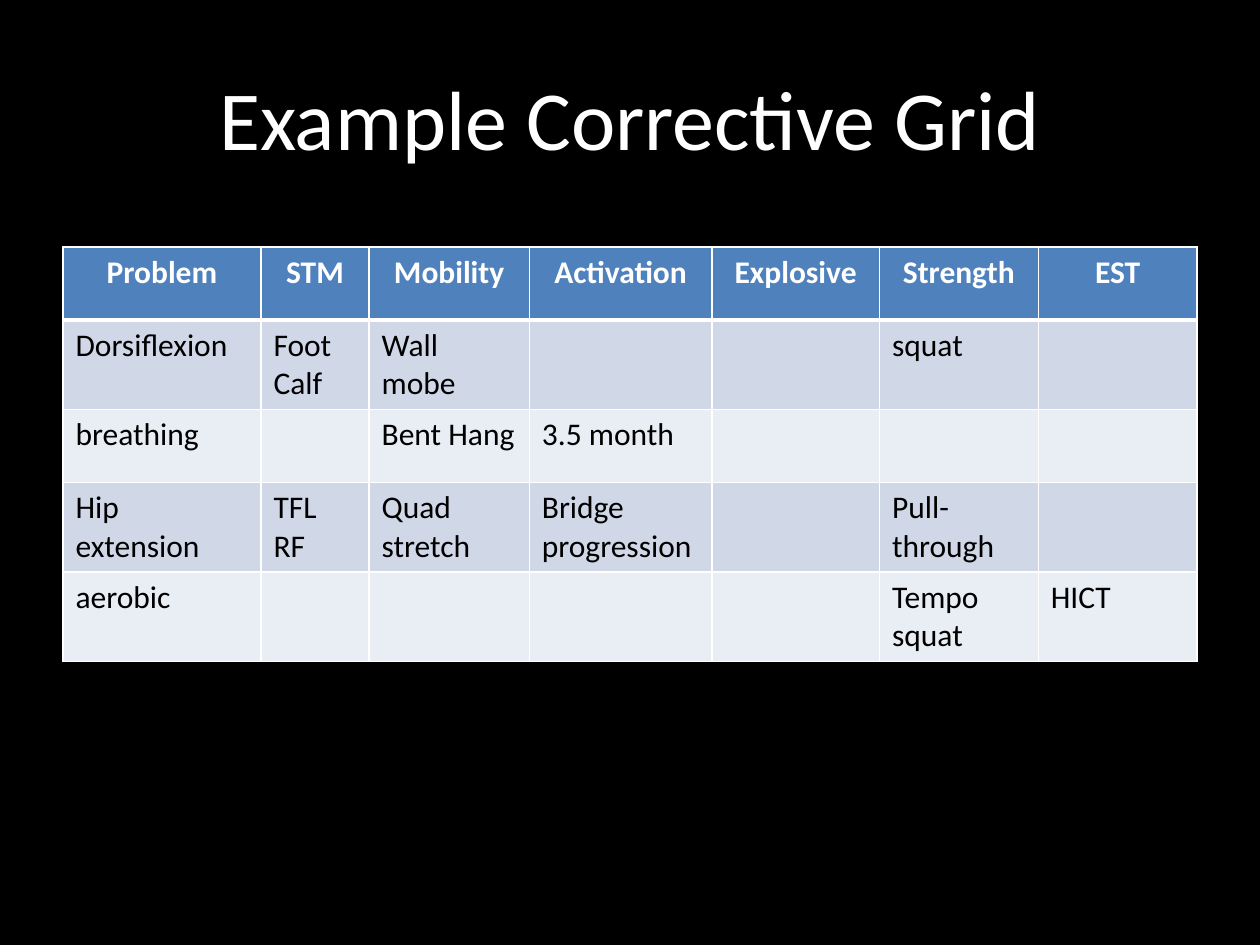
from dataclasses import dataclass

from lxml.etree import SubElement
from pptx import Presentation
from pptx.dml.color import RGBColor
from pptx.enum.text import MSO_ANCHOR as Anchor, PP_ALIGN as Align
from pptx.oxml.ns import qn
from pptx.util import Cm, Pt

BLACK = RGBColor(0x00, 0x00, 0x00)
WHITE = RGBColor(0xFF, 0xFF, 0xFF)
HEADER_BLUE = RGBColor(0x4F, 0x81, 0xBD)
BAND_DARK = RGBColor(0xD0, 0xD8, 0xE8)
BAND_LIGHT = RGBColor(0xE9, 0xED, 0xF4)

COLUMN_WIDTHS = [3.99, 2.18, 3.23, 3.68, 3.38, 3.2, 3.2]
ROW_HEIGHT = 1.47


@dataclass
class RowStyle:
    fill: RGBColor
    color: RGBColor
    bold: bool
    align: Align
    top: float = 1
    bottom: float = 1


HEADER = RowStyle(HEADER_BLUE, WHITE, True, Align.CENTER, bottom=3)
FIRST = RowStyle(BAND_DARK, BLACK, False, Align.LEFT, top=3)
DARK = RowStyle(BAND_DARK, BLACK, False, Align.LEFT)
LIGHT = RowStyle(BAND_LIGHT, BLACK, False, Align.LEFT)

# "\n" starts a paragraph, "\v" breaks a line
ROWS = [
    (HEADER, ["Problem", "STM", "Mobility", "Activation", "Explosive", "Strength", "EST"]),
    (FIRST, ["Dorsiflexion", "Foot\nCalf", "Wall\vmobe", "", "", "squat", ""]),
    (LIGHT, ["breathing", "", "Bent Hang", "3.5 month", "", "", ""]),
    (DARK, ["Hip extension", "TFL\nRF", "Quad stretch", "Bridge\nprogression", "",
            "Pull-through", ""]),
    (LIGHT, ["aerobic", "", "", "", "", "Tempo squat", "HICT"]),
]


def format_text(text_frame, align: Align, size: float, color: RGBColor, bold: bool) -> None:
    for paragraph in text_frame.paragraphs:
        paragraph.alignment = align
        values = {"name": "Calibri", "size": Pt(size), "bold": bold}
        for name, value in values.items():
            setattr(paragraph.font, name, value)
        paragraph.font.color.rgb = color


def set_borders(cell, style: RowStyle) -> None:
    properties = cell._tc.get_or_add_tcPr()
    widths = {"lnL": 1, "lnR": 1, "lnT": style.top, "lnB": style.bottom}
    for index, (tag, width) in enumerate(widths.items()):
        line = SubElement(properties, qn(f"a:{tag}"), w=str(Pt(width)))
        fill = SubElement(line, qn("a:solidFill"))
        SubElement(fill, qn("a:srgbClr"), val=str(WHITE))
        properties.insert(index, line)  # borders come before the fill


def fill_cell(cell, text: str, style: RowStyle) -> None:
    cell.text_frame.text = text
    format_text(cell.text_frame, style.align, 18, style.color, style.bold)
    cell.fill.solid()
    cell.fill.fore_color.rgb = style.fill
    set_borders(cell, style)


def add_title(slide, text: str) -> None:
    title = slide.shapes.title
    title.left, title.top, title.width, title.height = Cm(1.27), Cm(0.76), Cm(22.86), Cm(3.18)
    title.text_frame.text = text
    title.text_frame.vertical_anchor = Anchor.MIDDLE
    format_text(title.text_frame, Align.CENTER, 48, WHITE, False)


def add_grid(slide) -> None:
    table = slide.shapes.add_table(
        len(ROWS), len(COLUMN_WIDTHS), Cm(1.27), Cm(4.98),
        Cm(sum(COLUMN_WIDTHS)), Cm(ROW_HEIGHT * len(ROWS))).table
    for column, width in zip(table.columns, COLUMN_WIDTHS):
        column.width = Cm(width)
    for row, (style, texts) in zip(table.rows, ROWS):
        row.height = Cm(ROW_HEIGHT)
        for cell, text in zip(row.cells, texts):
            fill_cell(cell, text, style)


def main() -> None:
    presentation = Presentation()
    presentation.slide_width, presentation.slide_height = Cm(25.4), Cm(19.05)
    slide = presentation.slides.add_slide(presentation.slide_layouts[5])  # title only

    # Background
    slide.background.fill.solid()
    slide.background.fill.fore_color.rgb = BLACK

    add_title(slide, "Example Corrective Grid")
    add_grid(slide)
    presentation.save("out.pptx")


if __name__ == "__main__":
    main()
